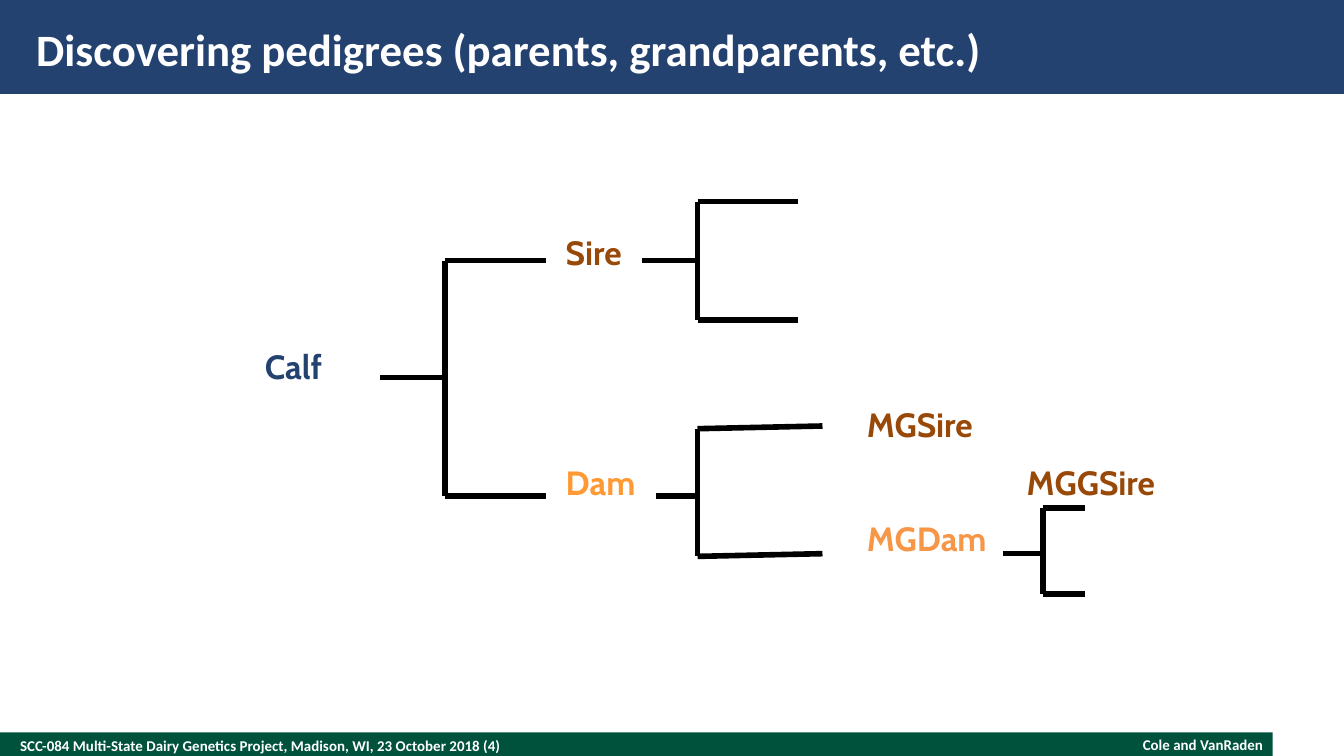
from lxml.etree import SubElement
from pptx import Presentation
from pptx.dml.color import RGBColor
from pptx.enum.shapes import MSO_CONNECTOR, MSO_SHAPE
from pptx.enum.text import MSO_ANCHOR as ANCHOR, PP_ALIGN as ALIGN
from pptx.oxml.ns import qn
from pptx.util import Inches, Pt

WHITE, BLACK, NAVY, GREEN = "FFFFFF", "000000", "244270", "00523C"
BROWN, ORANGE, PEACH = "984807", "FF9933", "F79646"
NO_GRID = "{2D5ABB26-0587-4C30-8999-92F81FD0307C}"

# left, top, width, height, fill
BARS = [
    (0, 5.45, 9.47, 0.2, GREEN),
    (0, 0, 10, 0.7, NAVY),
]
# text, left, top, width, height, size, alignment
TEXTS = [
    ("SCC-084 Multi-State Dairy Genetics Project, Madison, WI, 23 October 2018 (4)",
     0.15, 5.45, 6.5, 0.2, 8, ALIGN.LEFT),
    ("Cole and VanRaden", 7.2, 5.47, 2.2, 0.14, 8, ALIGN.RIGHT),
    ("Discovering pedigrees (parents, grandparents, etc.)",
     0.27, 0.1, 8.93, 0.52, 24, ALIGN.LEFT),
]
COLS = [2.52, 2.24, 2.73]
ROWS = [0.42] * 4 + [0.43, 0.44, 0.42, 0.41, 0.42]
# (row, column): name, colour, left margin
KIN = {
    (2, 1): ("Sire", BROWN, 0.07),
    (4, 0): ("Calf", NAVY, 0.35),
    (5, 2): ("MGSire", BROWN, 0.07),
    (6, 1): ("Dam", ORANGE, 0.07),
    (6, 2): ("MGGSire", BROWN, 1.26),
    (7, 2): ("MGDam", PEACH, 0.07),
}
# stem start, spine, branch end, top, middle, bottom, rise of the branches
FORKS = [
    (2.83, 3.31, 4.06, 1.94, 2.81, 3.69, 0),
    (4.78, 5.19, 5.94, 1.5, 1.94, 2.38, 0),
    (4.88, 5.19, 6.12, 3.19, 3.69, 4.14, 0.02),
    (7.46, 7.76, 8.07, 3.78, 4.12, 4.42, 0),
]


def paint(color, tone):
    color.rgb = RGBColor.from_string(tone)


def style(para, text, tone, **look):
    para.text = text
    font = para.runs[0].font
    for key, value in look.items():
        setattr(font, key, value)
    paint(font.color, tone)


def add_bar(slide, left, top, width, height, tone):
    bar = slide.shapes.add_shape(MSO_SHAPE.RECTANGLE, *map(Inches, (left, top, width, height)))
    bar.shadow.inherit = False
    bar.fill.solid()
    paint(bar.fill.fore_color, tone)
    bar.line.fill.background()


def add_text(slide, text, left, top, width, height, size, align):
    frame = slide.shapes.add_textbox(*map(Inches, (left, top, width, height))).text_frame
    layout = dict(word_wrap=True, vertical_anchor=ANCHOR.MIDDLE, margin_left=0,
                  margin_right=0, margin_top=0, margin_bottom=0)
    for key, value in layout.items():
        setattr(frame, key, value)
    para = frame.paragraphs[0]
    para.alignment = align
    style(para, text, WHITE, size=Pt(size), name="Calibri", bold=True)


def add_kin(slide):
    """Place the names of the relatives in a table without lines or fills."""
    box = map(Inches, (1.62, 0.84, sum(COLS), sum(ROWS)))
    table = slide.shapes.add_table(len(ROWS), len(COLS), *box).table
    table.first_row = table.horz_banding = False
    table._tbl.tblPr.find(qn("a:tableStyleId")).text = NO_GRID
    for col, width in zip(table.columns, COLS):
        col.width = Inches(width)
    for row, height in zip(table.rows, ROWS):
        row.height = Inches(height)
    for cell in table.iter_cells():
        cell.fill.background()
        cell.margin_top = cell.margin_bottom = Inches(0.04)
    for place, (name, tone, margin) in KIN.items():
        cell = table.cell(*place)
        cell.vertical_anchor = ANCHOR.MIDDLE
        cell.margin_left, cell.margin_right = Inches(margin), Inches(0.07)
        style(cell.text_frame.paragraphs[0], name, tone, size=Pt(18), name="Cabin", bold=True)


def add_line(slide, *ends):
    line = slide.shapes.add_connector(MSO_CONNECTOR.STRAIGHT, *map(Inches, ends))
    line.line.width = Pt(3)
    paint(line.line.color, BLACK)
    SubElement(line._element.spPr, qn("a:effectLst"))


def add_fork(slide, start, spine, end, top, mid, bottom, rise):
    add_line(slide, start, mid, spine, mid)
    add_line(slide, spine, top, spine, bottom)
    for y in (top, bottom):
        add_line(slide, spine, y, end, y - rise)


def main():
    deck = Presentation()
    deck.slide_width = Inches(10)
    deck.slide_height = deck.slide_width * 9 // 16
    slide = deck.slides.add_slide(deck.slide_layouts[6])
    for bar in BARS:
        add_bar(slide, *bar)
    for text in TEXTS:
        add_text(slide, *text)
    add_kin(slide)
    for fork in FORKS:
        add_fork(slide, *fork)
    deck.save("out.pptx")


if __name__ == "__main__":
    main()
